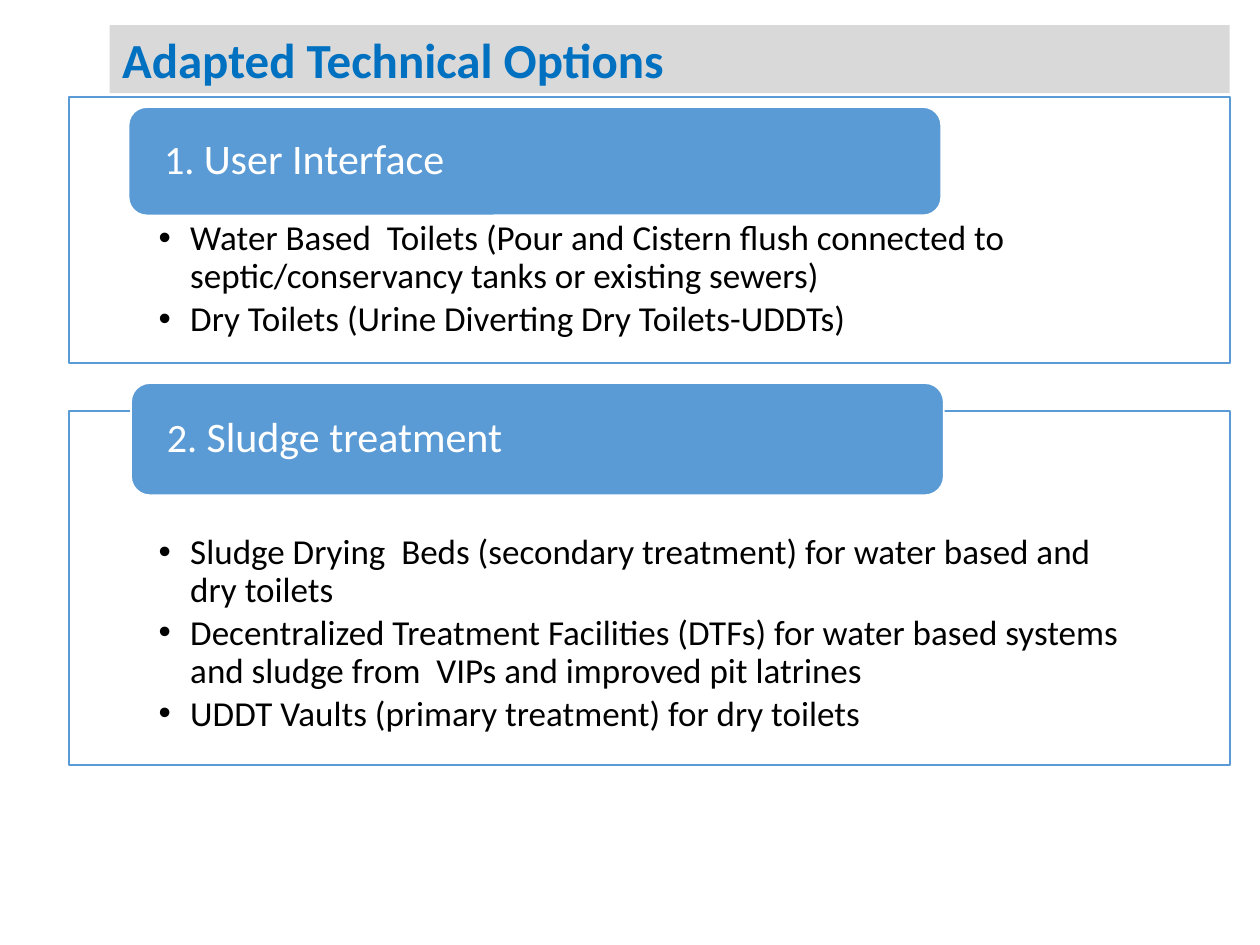
from lxml import etree
from pptx import Presentation
from pptx.dml.color import RGBColor
from pptx.enum.shapes import MSO_SHAPE as SHAPE
from pptx.enum.text import MSO_ANCHOR as ANCHOR, MSO_AUTO_SIZE as AUTOSIZE, PP_ALIGN as ALIGN
from pptx.oxml.ns import qn
from pptx.util import Inches, Pt

BLUE, WHITE = "5B9BD5", "FFFFFF"


def rgb(color):
    return RGBColor.from_string(color)


def add_text(p, text, size=20, color="000000", bold=False, spacing=0.9, after=0):
    p.alignment = ALIGN.LEFT
    p.line_spacing = spacing
    p.space_before, p.space_after = Pt(0), Pt(after)
    r = p.add_run()
    r.text = text
    r.font.name, r.font.size, r.font.bold = "Calibri", Pt(size), bold
    r.font.color.rgb = rgb(color)


sections = [
    (0.77, 2.11, 1.02, 0.85, 0.86, "1. ", "User Interface", [
        "Water Based  Toilets (Pour and Cistern flush connected to septic/conservancy tanks or existing sewers)",
        "Dry Toilets (Urine Diverting Dry Toilets-UDDTs)",
    ]),
    (3.26, 2.81, 1.04, 3.04, 0.89, "2. ", "Sludge treatment", [
        "Sludge Drying  Beds (secondary treatment) for water based and dry toilets",
        "Decentralized Treatment Facilities (DTFs) for water based systems and sludge from  VIPs and improved pit latrines",
        "UDDT Vaults (primary treatment) for dry toilets",
    ]),
]

prs = Presentation()
prs.slide_width, prs.slide_height = Inches(10), Inches(7.5)
s = prs.slides.add_slide(prs.slide_layouts[3])

title = s.shapes.title
title.left, title.top, title.width, title.height = Inches(0.87), Inches(0.2), Inches(8.89), Inches(0.54)
title.fill.solid()
title.fill.fore_color.rgb = rgb("D9D9D9")
tf = title.text_frame
tf.auto_size = AUTOSIZE.NONE
tf.vertical_anchor = ANCHOR.MIDDLE
add_text(tf.paragraphs[0], "Adapted Technical Options", size=28, color="0070C0", bold=True, spacing=1.0)

for i, (top, height, head_left, head_top, head_height, number, heading, items) in enumerate(sections):
    body = s.placeholders[i + 1]
    body.left, body.top, body.width, body.height = Inches(0.55), Inches(top), Inches(9.21), Inches(height)
    body.fill.solid()
    body.fill.fore_color.rgb = rgb(WHITE)
    body.line.color.rgb = rgb(BLUE)
    body.line.width = Pt(1)
    tf = body.text_frame
    tf.auto_size = AUTOSIZE.NONE
    tf.vertical_anchor = ANCHOR.TOP
    tf.margin_left = tf.margin_right = Inches(0.71)
    tf.margin_top, tf.margin_bottom = Inches(0.98), Inches(0.16)
    for j, item in enumerate(items):
        p = tf.add_paragraph() if j else tf.paragraphs[0]
        pPr = p._p.get_or_add_pPr()
        pPr.set("marL", str(Inches(0.25)))
        pPr.set("indent", str(-Inches(0.25)))
        etree.SubElement(pPr, qn("a:buChar")).set("char", "•")
        add_text(p, item, after=3)

    sp = s.shapes.add_shape(SHAPE.ROUNDED_RECTANGLE, Inches(head_left), Inches(head_top),
                            Inches(6.45), Inches(head_height))
    sp.shadow.inherit = False
    sp.fill.solid()
    sp.fill.fore_color.rgb = rgb(BLUE)
    sp.line.color.rgb = rgb(WHITE)
    sp.line.width = Pt(1)
    tf = sp.text_frame
    tf.word_wrap = True
    tf.vertical_anchor = ANCHOR.MIDDLE
    tf.margin_left = tf.margin_right = Inches(0.24)
    tf.margin_top = tf.margin_bottom = 0
    add_text(tf.paragraphs[0], number, size=23, color=WHITE)
    add_text(tf.paragraphs[0], heading, size=24, color=WHITE)

prs.save("out.pptx")
